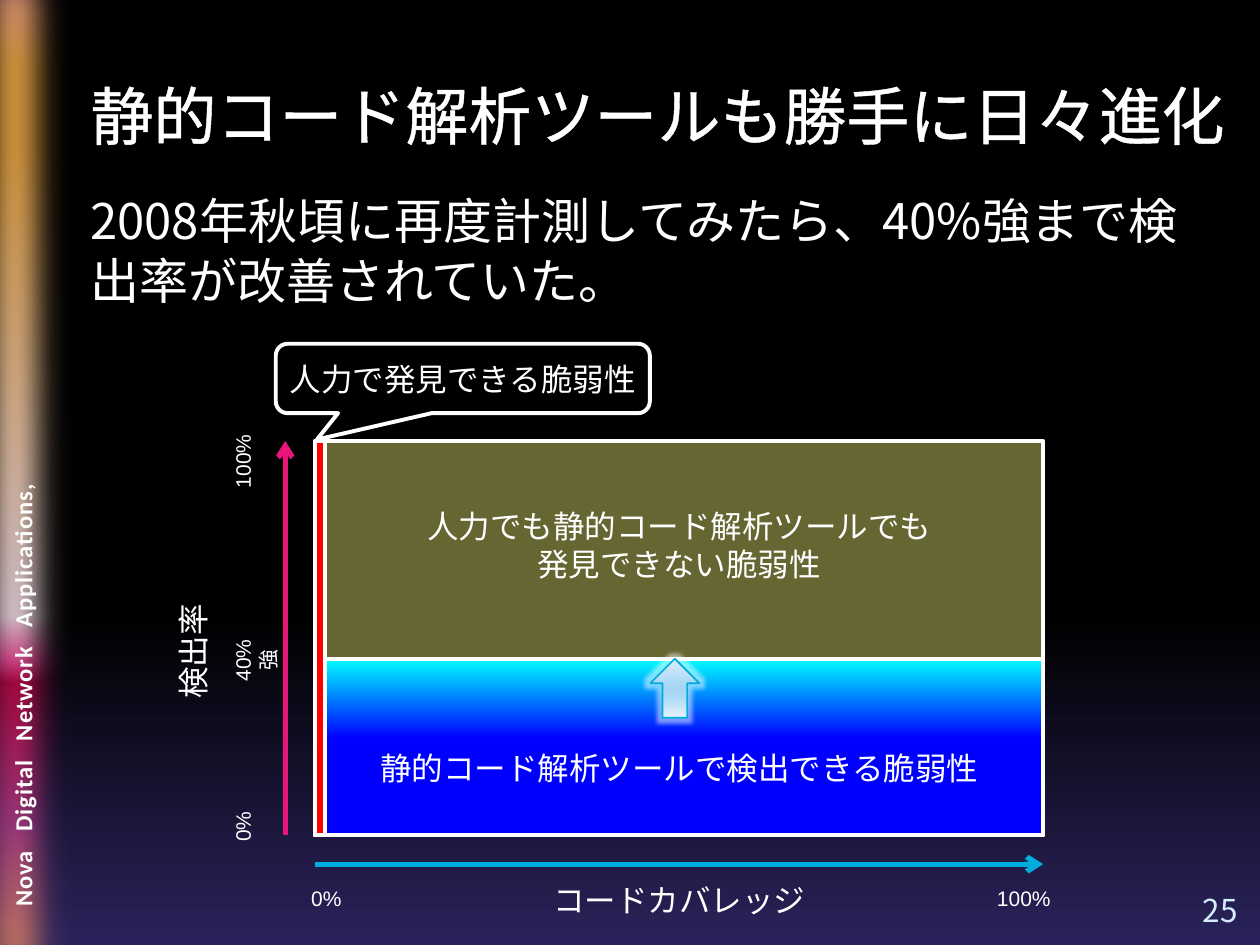
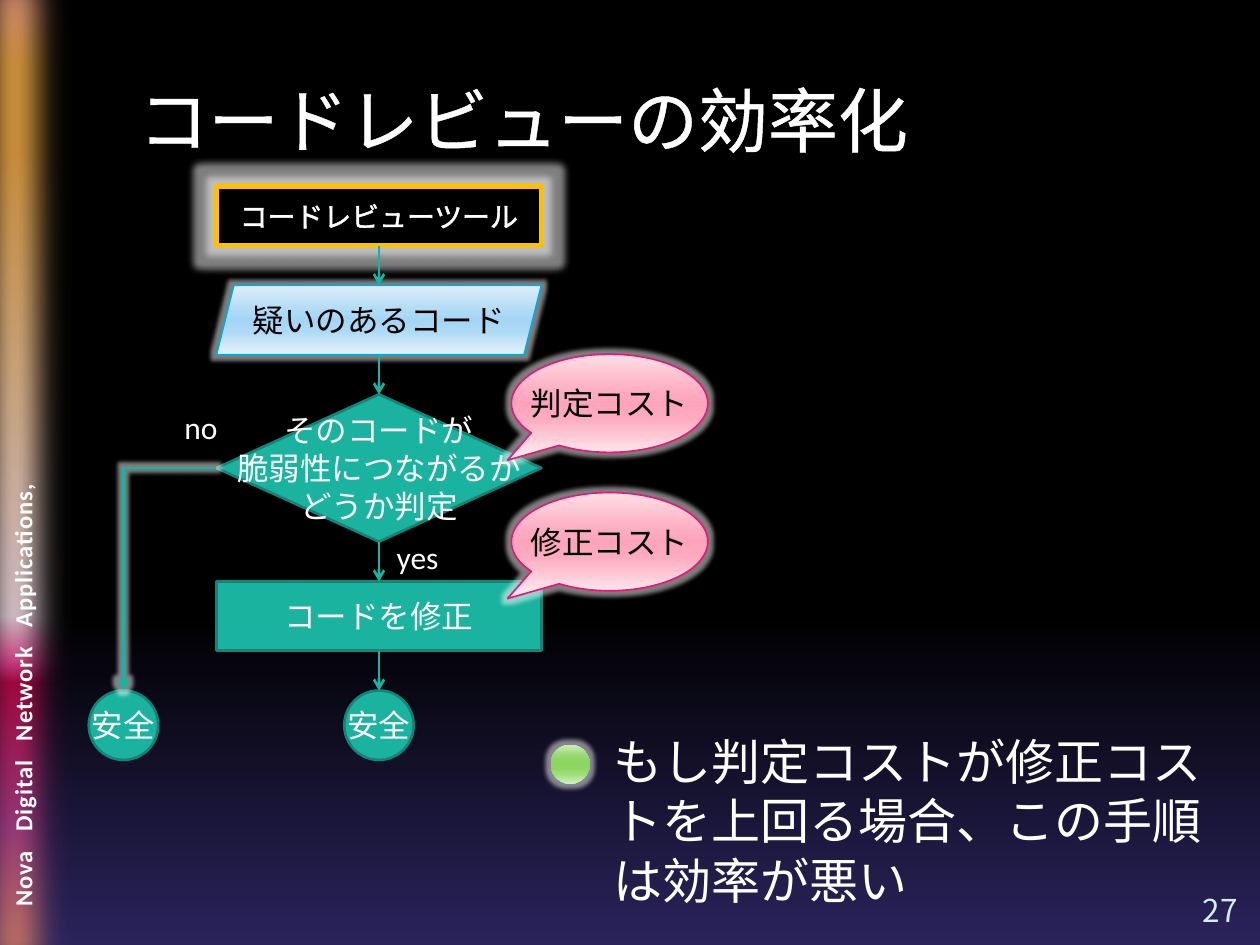
from lxml import etree
from pptx import Presentation
from pptx.dml.color import RGBColor
from pptx.enum.shapes import MSO_CONNECTOR, MSO_SHAPE
from pptx.enum.text import MSO_ANCHOR, MSO_AUTO_SIZE, PP_ALIGN
from pptx.oxml.ns import qn
from pptx.util import Cm, Pt

STRAIGHT, ELBOW = MSO_CONNECTOR.STRAIGHT, MSO_CONNECTOR.ELBOW
LEFT, CENTER, RIGHT = PP_ALIGN.LEFT, PP_ALIGN.CENTER, PP_ALIGN.RIGHT
TOP, MIDDLE, BOTTOM = MSO_ANCHOR.TOP, MSO_ANCHOR.MIDDLE, MSO_ANCHOR.BOTTOM
RECTANGLE, OVAL, UP_ARROW = MSO_SHAPE.RECTANGLE, MSO_SHAPE.OVAL, MSO_SHAPE.UP_ARROW
PARALLELOGRAM = MSO_SHAPE.PARALLELOGRAM
DECISION, PROCESS = MSO_SHAPE.FLOWCHART_DECISION, MSO_SHAPE.FLOWCHART_PROCESS
JUNCTION = MSO_SHAPE.FLOWCHART_CONNECTOR
ROUND_CALLOUT = MSO_SHAPE.ROUNDED_RECTANGULAR_CALLOUT
OVAL_CALLOUT = MSO_SHAPE.OVAL_CALLOUT


class Theme:
    white, black, number = "FFFFFF", "000000", "D6ECFF"
    sky, pink, teal, deep_teal = "00ADDC", "EA157A", "1AB39F", "138476"
    olive, red, amber = "666633", "FF0000", "FFC000"
    footer, footer_edge = "FCFEFC", "1A2A0C"
    night = [(0, "000000"), (65, "000000"), (100, "2A235B")]
    sunset = [(0, "FC9FCB"), (13, "F8B049"), (21, "F8B049"), (63, "FEE7F2"),
              (67, "F952A0"), (69, "C50849"), (82, "B43E85"), (100, "F8B049")]
    ocean = [(0, "00FFFF"), (45, "0000FF"), (100, "0000FF")]
    ice = [(0, "DEEEFA"), (40, "ACD9F5"), (50, "A4D6F4"), (65, "ACD9F5"),
           (100, "E5F2FB")]
    rose = [(0, "FDDEE5"), (40, "FDABC0"), (50, "FDA3BB"), (65, "FDABC0"),
            (100, "FDE5EB")]
    leaf = [(0, "CCF2BB"), (25, "9CD979"), (40, "8FD562"), (50, "8DD55F"),
            (60, "8FD562"), (75, "9EDD7B"), (100, "CBF4B9")]
    text_font, title_font = "Calibri", "Noto Sans Mono"
    axis_font, number_font = "Arial", "Noto Sans CJK JP"
    tick, footer_size, tool, text, body = 12, 14, 16, 18, 28
    body_leading = 34
    title_edge = 1.45


def add_xml(parent, tag, **attributes):
    return etree.SubElement(parent, qn(tag), {k: str(v) for k, v in attributes.items()})


def add_colour(parent, colour, alpha=100):
    node = add_xml(parent, "a:srgbClr", val=colour)
    if alpha < 100:
        add_xml(node, "a:alpha", val=alpha * 1000)


def paint(fill, element, colour):
    """Fill with one colour, with a list of vertical stops, or with nothing."""
    if colour is None:
        fill.background()
    elif isinstance(colour, str):
        fill.solid()
        fill.fore_color.rgb = RGBColor.from_string(colour)
    else:
        fill.gradient()
        fill.gradient_angle = 270
        stops = element.xpath(".//a:gsLst")[0]
        stops.clear()
        for position, stop_colour in colour:
            add_colour(add_xml(stops, "a:gs", pos=position * 1000), stop_colour)


def add_glow(effects, radius):
    glow = add_xml(effects, "a:glow", rad=Pt(radius))
    add_colour(glow, Theme.white, 50)


def outline_text(span, colour, width, alpha=100):
    edge = etree.Element(qn("a:ln"), w=str(Pt(width)))
    add_colour(add_xml(edge, "a:solidFill"), colour, alpha)
    span._r.get_or_add_rPr().insert(0, edge)


class SlideBuilder:
    def __init__(self, deck, theme):
        self.deck, self.theme, self.page = deck, theme, None
        master = deck.slide_master
        paint(master.background.fill, master.element, theme.night)

    def start(self, number, title, title_left, title_width, title_size):
        theme = self.theme
        self.page = self.deck.slides.add_slide(self.deck.slide_layouts[1])
        self.side_band()
        heading = self.page.shapes.title
        self.place(heading, title_left, 1.42, title_width, 2.54)
        self.set_text(heading, title, size=title_size, font=theme.title_font,
                      align=LEFT, edge=theme.title_edge, wrap=True)
        box = self.text_box(22.63, 17.83, 2.57, 1.02)
        self.set_text(box, number, font=theme.number_font, colour=theme.number,
                      align=RIGHT, anchor=BOTTOM, wrap=True)

    def side_band(self):
        theme = self.theme
        band = self.shape(RECTANGLE, -1.19, -1.6, 2.97, 22.23, theme.sunset)
        add_xml(band.element.xpath(".//a:effectLst")[0], "a:softEdge", rad=Pt(25))
        box = self.text_box(-4.83, 12.8, 10.59, 0.86, rotation=270)
        box.text_frame.word_wrap = True
        para = box.text_frame.paragraphs[0]
        words = ["Nova", "Digital", "Network", "Applications,"]
        for index, word in enumerate(words):
            if index:
                self.footer_span(para, " ", 750)
            self.footer_span(para, word, 50)

    def footer_span(self, para, text, spacing):
        theme = self.theme
        span = para.add_run()
        span.text = text
        self.style(span, theme.footer_size, theme.text_font, theme.footer)
        span.font.bold = True
        span._r.get_or_add_rPr().set("spc", str(spacing))
        outline_text(span, theme.footer_edge, 1.06, 6)

    @staticmethod
    def place(item, left, top, width, height):
        frame = {"left": left, "top": top, "width": width, "height": height}
        for name, value in frame.items():
            setattr(item, name, Cm(value))

    @staticmethod
    def style(span, size, font, colour):
        for name, value in {"size": Pt(size), "name": font}.items():
            setattr(span.font, name, value)
        span.font.color.rgb = RGBColor.from_string(colour)
        add_xml(span._r.get_or_add_rPr(), "a:ea", typeface=font)

    def set_text(self, item, text, size=Theme.text, font=Theme.text_font,
                 colour=Theme.white, align=CENTER, anchor=TOP, wrap=False,
                 edge=None, leading=None, **margins):
        frame = item.text_frame
        settings = {"word_wrap": wrap, "auto_size": MSO_AUTO_SIZE.NONE,
                    "vertical_anchor": anchor}
        settings.update({name: Cm(value) for name, value in margins.items()})
        for name, value in settings.items():
            setattr(frame, name, value)
        frame.text = text
        for para in frame.paragraphs:
            para.alignment = align
            para.space_before = Pt(0)
            if leading:
                para.line_spacing = Pt(leading)
            for span in para.runs:
                self.style(span, size, font, colour)
                if edge:
                    outline_text(span, colour, edge)

    def body(self, text, left, top, width, height, font):
        theme = self.theme
        holder = self.page.placeholders[1]
        self.place(holder, left, top, width, height)
        self.set_text(holder, text, size=theme.body, font=font, align=LEFT,
                      wrap=True, leading=theme.body_leading)
        for para in holder.text_frame.paragraphs:
            properties = para._p.get_or_add_pPr()
            properties.set("marL", "0")
            properties.set("indent", "0")
            add_xml(properties, "a:buNone")

    def text_box(self, left, top, width, height, rotation=0):
        box = self.page.shapes.add_textbox(*map(Cm, (left, top, width, height)))
        box.rotation = rotation
        return box

    def label(self, text, center_x, center_y, width, height=1.02, rotation=0, **style):
        box = self.text_box(center_x - width / 2, center_y - height / 2,
                            width, height, rotation)
        self.set_text(box, text, **style)

    def shape(self, kind, left, top, width, height, fill=None, line=None,
              weight=0.94, text=None, glow=None, adjust=(), **style):
        item = self.page.shapes.add_shape(kind, *map(Cm, (left, top, width, height)))
        for index, value in enumerate(adjust):
            item.adjustments[index] = value
        paint(item.fill, item.element, fill)
        paint(item.line.fill, item.element, line)
        if line:
            item.line.width = Pt(weight)
        item.shadow.inherit = False
        if glow:
            add_glow(item.element.xpath(".//a:effectLst")[0], glow)
        if text:
            self.set_text(item, text, anchor=MIDDLE, **style)
        return item

    def arrow(self, start, end, colour, weight, kind=STRAIGHT, glow=None):
        line = self.page.shapes.add_connector(kind, *map(Cm, (*start, *end)))
        line.line.color.rgb = RGBColor.from_string(colour)
        line.line.width = Pt(weight)
        properties = line.element.spPr
        add_xml(properties.find(qn("a:ln")), "a:tailEnd", type="arrow")
        effects = add_xml(properties, "a:effectLst")
        if glow:
            add_glow(effects, glow)
        if kind == ELBOW:
            properties.find(qn("a:prstGeom")).set("prst", "bentConnector2")


def build_coverage_slide(builder):
    theme = builder.theme
    builder.start("25", "静的コード解析ツールも勝手に日々進化", 1.57, 23.5, 36)
    builder.body("2008年秋頃に再度計測してみたら、40%強まで検出率が改善されていた。",
                 1.57, 3.71, 23.22, 2.64, theme.number_font)

    left, top, width, height = 6.35, 8.89, 14.68, 7.95
    right, bottom = left + width, top + height
    tool_top = 13.28
    frame = {"line": theme.white, "weight": 2.25}
    builder.arrow((left, 17.42), (right, 17.42), theme.sky, 3)
    builder.arrow((5.75, bottom), (5.75, top), theme.pink, 3)
    builder.shape(RECTANGLE, left, top, width, height, theme.olive, **frame,
                  text="人力でも静的コード解析ツールでも\n発見できない脆弱性",
                  margin_bottom=3.9)
    builder.shape(RECTANGLE, left, tool_top, width, bottom - tool_top, theme.ocean,
                  **frame, text="静的コード解析ツールで検出できる脆弱性",
                  margin_top=0.95)
    builder.shape(RECTANGLE, left, top, 0.2, height, theme.red, **frame)
    builder.shape(ROUND_CALLOUT, 5.56, 6.93, 7.54, 1.4, **frame,
                  text="人力で発見できる脆弱性", adjust=(-0.39, 0.88, 0.17))

    builder.label("コードカバレッジ", left + width / 2, 18.14, 5.64)
    builder.label("検出率", 3.89, 13.13, 2.44, rotation=270)
    tick = {"height": 0.76, "size": theme.tick, "font": theme.axis_font}
    builder.label("0%", 6.58, 18.11, 1.12, **tick)
    builder.label("100%", 20.64, 18.11, 1.6, **tick)
    for text, center_y, tick_width in (("100%", 9.3, 1.6), ("40%強", 13.31, 1.5),
                                       ("0%", 16.66, 1.12)):
        builder.label(text, 4.89, center_y, tick_width, rotation=270,
                      wrap=text.endswith("強"), **tick)
    builder.shape(UP_ARROW, 13.11, tool_top, 0.99, 1.19, theme.ice, theme.sky, glow=5)


def build_review_slide(builder):
    theme = builder.theme
    builder.start("27", "コードレビューの効率化", 2.54, 21.59, 40)

    center, width, gap, row = 7.64, 6.55, 0.8, 1.4
    decision_height, safe_center = 2.97, 2.49
    left = center - width / 2
    teal = {"fill": theme.teal, "line": theme.deep_teal, "weight": 1.5}
    steps = [
        (RECTANGLE, width, 1.19, "コードレビューツール",
         {"fill": theme.black, "line": theme.amber, "weight": 3, "glow": 8,
          "size": theme.tool, "edge": theme.title_edge}),
        (PARALLELOGRAM, width, row, "疑いのあるコード",
         {"fill": theme.ice, "line": theme.sky, "glow": 5, "colour": theme.black}),
        (DECISION, width, decision_height,
         "そのコードが\n脆弱性につながるか\nどうか判定", teal),
        (PROCESS, width, row, "コードを修正", teal),
        (JUNCTION, row, row, "安全", teal),
    ]
    tops, top = [], 3.76
    for kind, step_width, height, text, style in steps:
        builder.shape(kind, center - step_width / 2, top, step_width, height,
                      text=text, **style)
        if tops:
            builder.arrow((center, top - gap), (center, top), theme.teal, 1.5)
        tops.append(top)
        top += height + gap

    decision_middle = tops[2] + decision_height / 2
    builder.shape(JUNCTION, safe_center - row / 2, tops[-1], row, row,
                  text="安全", **teal)
    builder.arrow((left, decision_middle), (safe_center, tops[-1]), theme.teal, 1.5,
                  kind=ELBOW, glow=5)
    builder.label("no", 4.05, 8.61, 1.19)
    builder.label("yes", 8.42, 11.23, 1.4)

    builder.shape(OVAL, 11.1, 15.01, 0.79, 0.79, theme.leaf, glow=5)
    builder.body("もし判定コストが修正コストを上回る場合、この手順は効率が悪い",
                 12.12, 14.6, 12.5, 3.84, theme.text_font)
    for text, callout_top in (("判定コスト", 7.14), ("修正コスト", 9.93)):
        builder.shape(OVAL_CALLOUT, 10.31, callout_top, 3.96, 1.98, theme.rose,
                      theme.pink, text=text, colour=theme.black, glow=5,
                      adjust=(-0.52, 0.58))


def main():
    deck = Presentation()
    deck.slide_width, deck.slide_height = Cm(25.4), Cm(19.05)
    builder = SlideBuilder(deck, Theme())
    build_coverage_slide(builder)
    build_review_slide(builder)
    deck.save("out.pptx")


if __name__ == "__main__":
    main()
